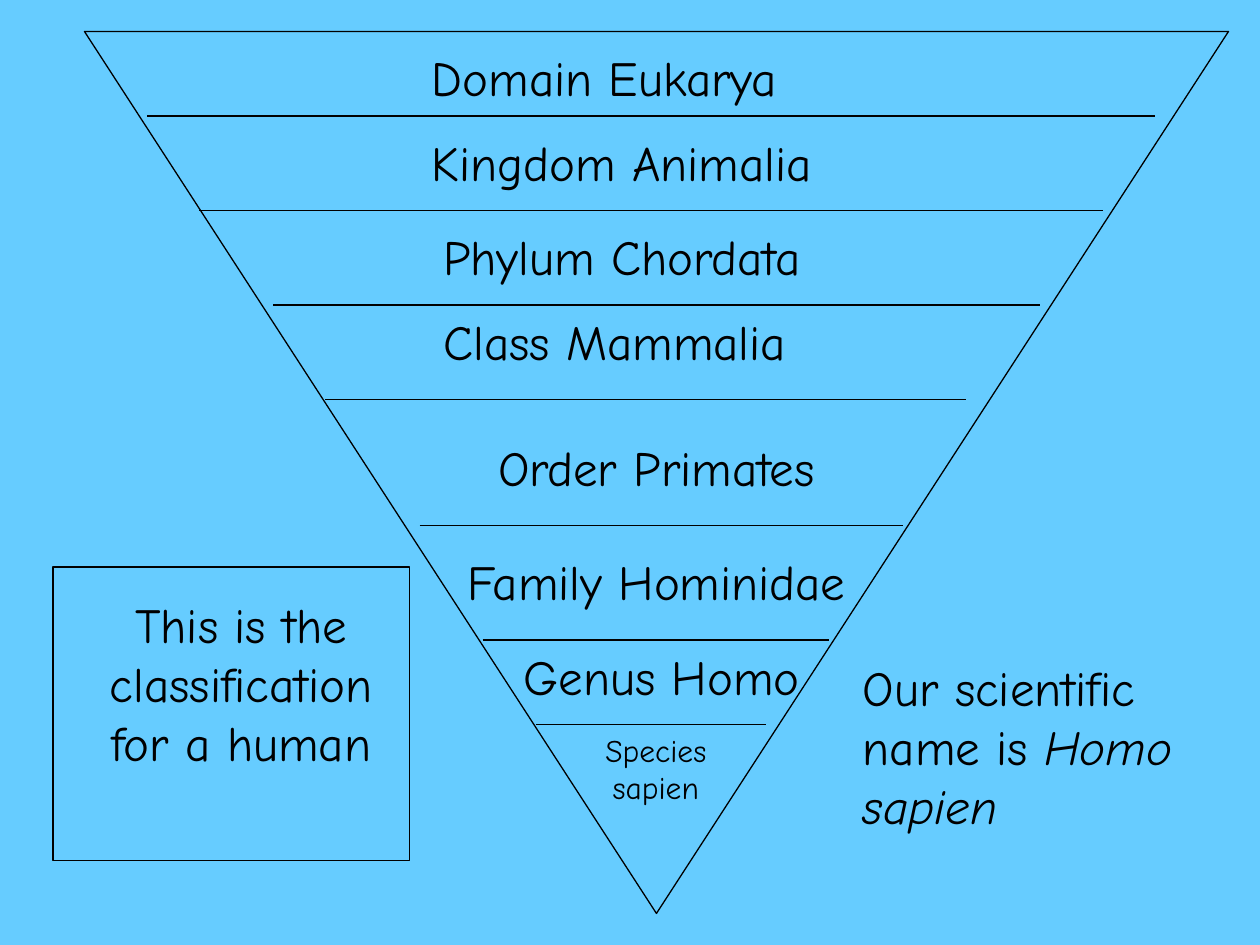
"""Build a slide with the inverted pyramid of human classification."""
from lxml import etree
from pptx import Presentation
from pptx.dml.color import RGBColor
from pptx.enum.shapes import MSO_CONNECTOR, MSO_SHAPE
from pptx.enum.text import MSO_AUTO_SIZE, PP_ALIGN
from pptx.oxml.ns import qn
from pptx.util import Inches, Pt

SKY = RGBColor(0x66, 0xCC, 0xFF)
BLACK = RGBColor(0x00, 0x00, 0x00)
FONT = "Comic Neue"
LINE_WIDTH = Pt(0.75)
LEFT, CENTER = PP_ALIGN.LEFT, PP_ALIGN.CENTER
TRIANGLE, RECTANGLE = MSO_SHAPE.FLOWCHART_MERGE, MSO_SHAPE.RECTANGLE
STRAIGHT = MSO_CONNECTOR.STRAIGHT
FIT_SHAPE = MSO_AUTO_SIZE.SHAPE_TO_FIT_TEXT

# left, right, height on the slide
DIVIDERS = [
    (1.17, 9.17, 0.92),
    (1.58, 8.75, 1.67),
    (2.17, 8.25, 2.42),
    (2.58, 7.67, 3.17),
    (3.33, 7.17, 4.17),
    (3.83, 6.58, 5.08),
    (4.25, 6.08, 5.75),
]

# text, (left, top, width, height), alignment, size
LABELS = [
    ("Domain Eukarya", (3.33, 0.33, 4.08, 0.57), LEFT, 28),
    ("Kingdom Animalia", (3.33, 1, 4.08, 0.57), LEFT, 28),
    ("Phylum Chordata", (3.42, 1.75, 4.17, 0.57), LEFT, 28),
    ("Class Mammalia", (3.42, 2.42, 3.75, 0.57), LEFT, 28),
    ("Order Primates", (3.42, 3.42, 3.58, 0.57), CENTER, 28),
    ("Family Hominidae", (3.5, 4.33, 3.42, 0.57), CENTER, 28),
    ("Genus Homo", (4, 5.08, 2.5, 0.57), CENTER, 28),
    ("Species sapien", (4.33, 5.75, 1.75, 0.7), CENTER, 18),
    ("This is the classification for a human", (0.58, 4.67, 2.67, 1.51), CENTER, 28),
]


def add_outline(page, preset, bounds):
    """Add an unfilled preset shape with a thin black outline."""
    shape = page.shapes.add_shape(preset, *map(Inches, bounds))
    shape.shadow.inherit = False
    shape.fill.background()
    shape.line.color.rgb = BLACK
    shape.line.width = LINE_WIDTH


def add_divider(page, left, right, height):
    """Add a horizontal line between two ranks."""
    line = page.shapes.add_connector(
        STRAIGHT, Inches(left), Inches(height), Inches(right), Inches(height)
    )
    line.line.color.rgb = BLACK
    line.line.width = LINE_WIDTH
    properties = line._element.find(qn("p:spPr"))
    etree.SubElement(properties, qn("a:effectLst"))


def add_label(page, text, bounds, alignment, size):
    """Add a wrapped text box and return its paragraph."""
    box = page.shapes.add_textbox(*map(Inches, bounds))
    frame = box.text_frame
    frame.word_wrap = True
    frame.auto_size = FIT_SHAPE
    para = frame.paragraphs[0]
    para.add_run().text = text
    para.alignment = alignment
    para.font.name = FONT
    para.font.size = Pt(size)
    para.font.color.rgb = BLACK
    return para


def add_scientific_name(page):
    """Add the closing statement with the species name in italics."""
    para = add_label(page, "Our scientific name is ", (6.75, 5.17, 2.83, 1.5), LEFT, 28)
    span = para.add_run()
    span.text = "Homo sapien"
    span.font.italic = True


def main():
    """Build and save the deck."""
    deck = Presentation()
    deck.slide_width, deck.slide_height = Inches(10), Inches(7.5)
    page = deck.slides.add_slide(deck.slide_layouts.get_by_name("Blank"))
    page.background.fill.solid()
    page.background.fill.fore_color.rgb = SKY
    add_outline(page, TRIANGLE, (0.67, 0.25, 9.08, 7))
    for divider in DIVIDERS:
        add_divider(page, *divider)
    for label in LABELS:
        add_label(page, *label)
    add_outline(page, RECTANGLE, (0.42, 4.5, 2.83, 2.33))
    add_scientific_name(page)
    deck.save("out.pptx")


if __name__ == "__main__":
    main()
